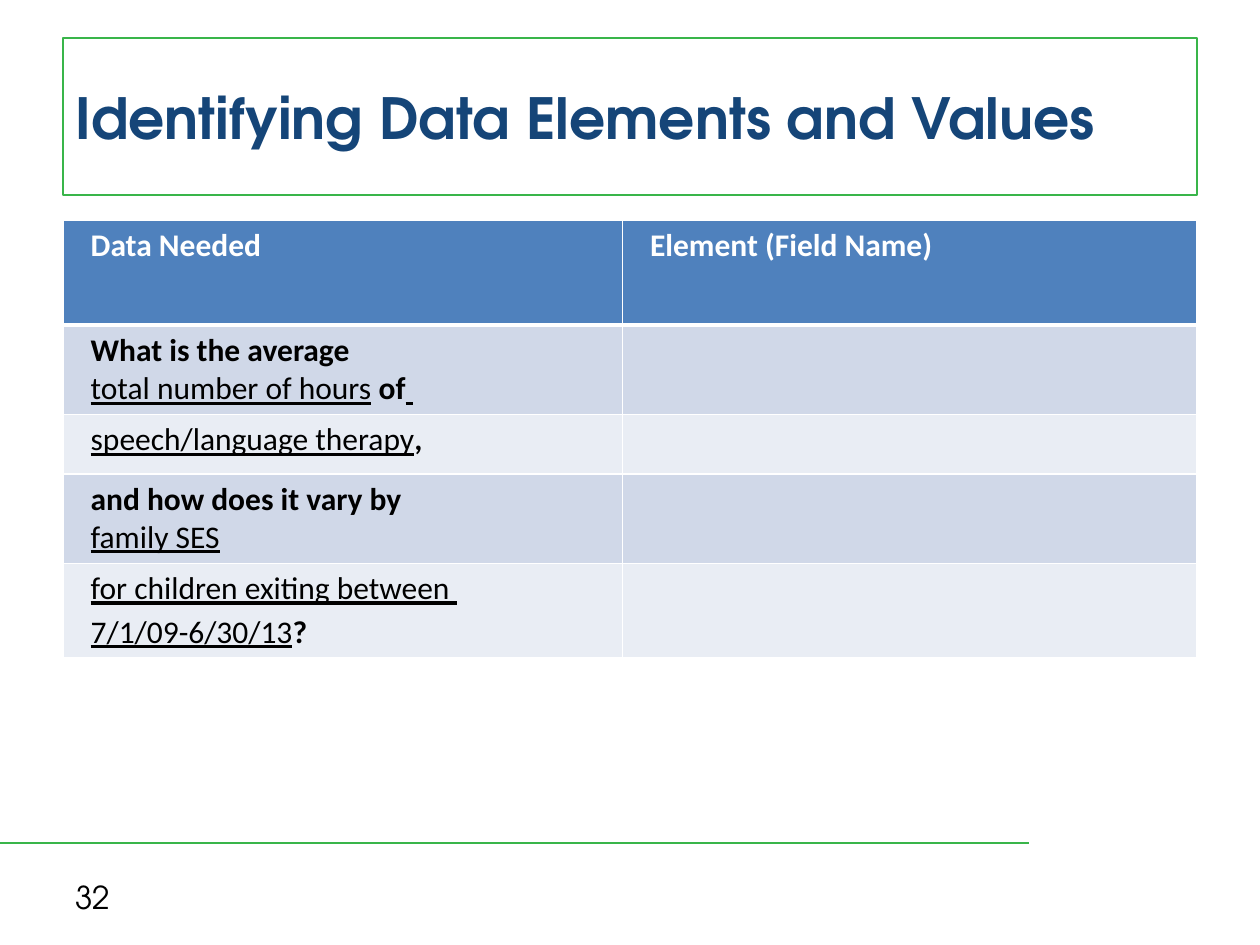
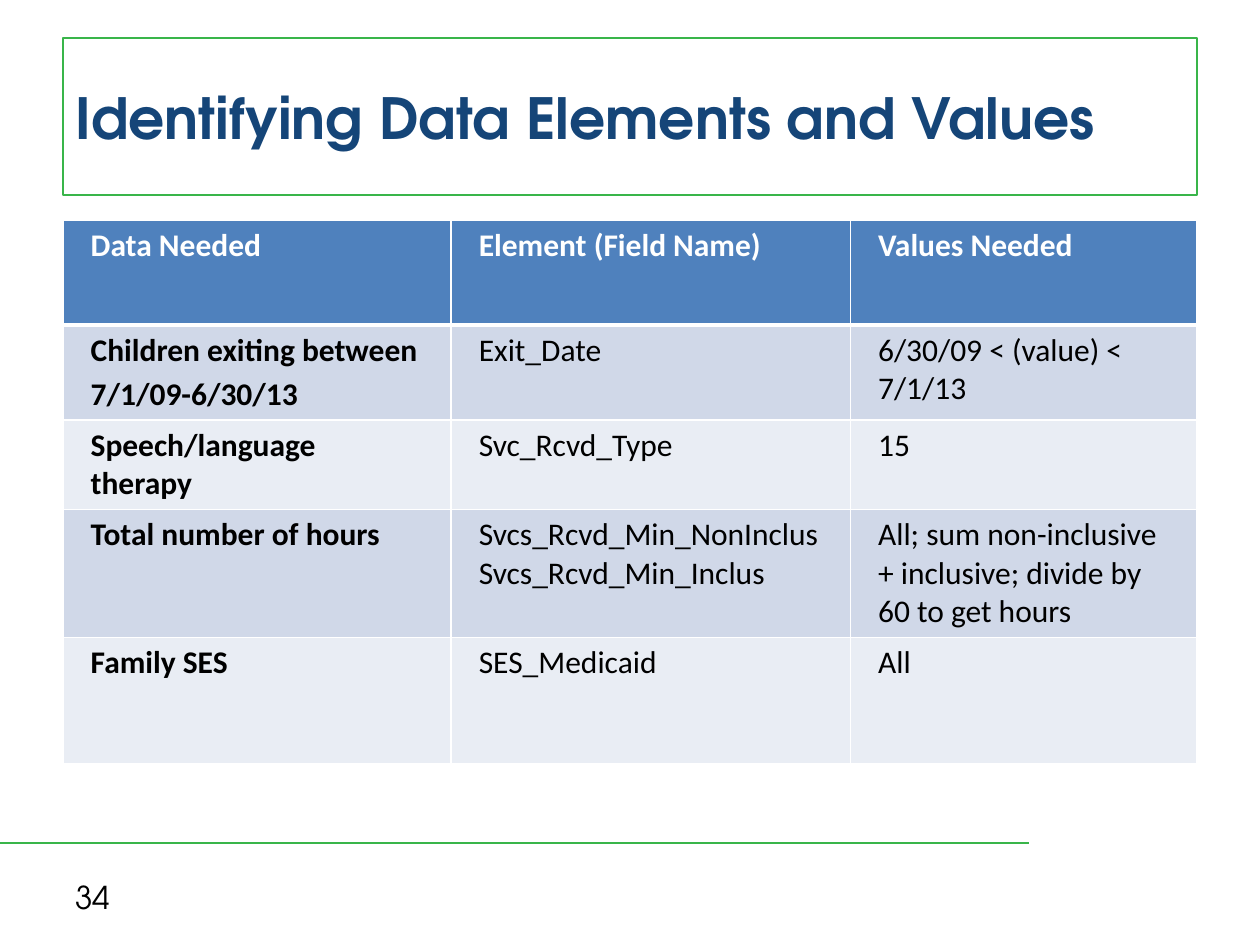
from lxml import etree
from pptx import Presentation
from pptx.dml.color import RGBColor
from pptx.enum.shapes import MSO_CONNECTOR, MSO_SHAPE
from pptx.enum.text import MSO_ANCHOR, PP_ALIGN
from pptx.oxml.ns import qn
from pptx.util import Inches, Pt

LEFT = PP_ALIGN.LEFT
MIDDLE = MSO_ANCHOR.MIDDLE
STRAIGHT = MSO_CONNECTOR.STRAIGHT
RECTANGLE = MSO_SHAPE.RECTANGLE

COLORS = {
    "green": "39B54A",
    "navy": "154578",
    "header": "4F81BD",
    "dark_band": "D0D8E8",
    "light_band": "E9EDF4",
    "white": "FFFFFF",
    "black": "000000",
}
HEADING_FONT = "TeX Gyre Adventor"
TABLE_FONT = "Calibri"
TITLE = "Identifying Data Elements and Values"


def color(name):
    return RGBColor.from_string(COLORS[name])


def write(frame, paragraphs, font=TABLE_FONT, size=18, ink="black", gap=0):
    """Each paragraph is a list of (text, style) runs; style holds b and/or u."""
    frame.word_wrap = True
    for index, runs in enumerate(paragraphs):
        paragraph = frame.add_paragraph() if index else frame.paragraphs[0]
        paragraph.alignment = LEFT
        if index and gap:
            paragraph.space_before = Pt(gap)
        for text, style in runs:
            run = paragraph.add_run()
            run.text = text
            run.font.name = font
            run.font.size = Pt(size)
            run.font.bold = "b" in style
            run.font.underline = "u" in style
            run.font.color.rgb = color(ink)


slides = [
    {
        "number": "32",
        "columns": [4.44, 4.56],
        "heights": [0.83, 0.58, 0.47, 0.67, 0.75],
        "rows": [
            [[[("Data Needed", "b")]], [[("Element (Field Name)", "b")]]],
            [[[("What is the average", "b")],
              [("total number of hours", "u"), (" ", ""), ("of", "b"), (" ", "u")]], []],
            [[[("speech/language therapy", "u"), (",", "b")]], []],
            [[[("and how does it vary by", "b")], [("family SES", "u")]], []],
            [[[("for children exiting between ", "u")],
              [("7/1/09-6/30/13", "u"), ("?", "b")]], []],
        ],
        "spaced_row": 4,
    },
    {
        "number": "34",
        "columns": [3.08, 3.17, 2.75],
        "heights": [0.83, 0.58, 0.58, 0.58, 1],
        "rows": [
            [[[("Data Needed", "b")]], [[("Element (Field Name)", "b")]],
             [[("Values Needed", "b")]]],
            [[[("Children exiting between", "b")], [("7/1/09-6/30/13", "b")]],
             [[("Exit_Date", "")]], [[("6/30/09 < (value) < 7/1/13", "")]]],
            [[[("Speech/language therapy", "b")]], [[("Svc_Rcvd_Type", "")]], [[("15", "")]]],
            [[[("Total number of hours", "b")]],
             [[("Svcs_Rcvd_Min_NonInclus", "")], [("Svcs_Rcvd_Min_Inclus", "")]],
             [[("All; sum non-inclusive + inclusive; divide by 60 to get hours", "")]]],
            [[[("Family SES", "b")]], [[("SES_Medicaid", "")]], [[("All", "")]]],
        ],
        "spaced_row": 1,
    },
]

prs = Presentation()
prs.slide_width = Inches(10)
prs.slide_height = Inches(7.5)

for content in slides:
    slide = prs.slides.add_slide(prs.slide_layouts[6])

    footer_rule = slide.shapes.add_connector(
        STRAIGHT, 0, Inches(6.69), Inches(8.17), Inches(6.69))
    footer_rule.line.color.rgb = color("green")
    footer_rule.line.width = Pt(1.5)
    etree.SubElement(footer_rule._element.spPr, qn("a:effectLst"))

    rows, columns, heights = content["rows"], content["columns"], content["heights"]
    data_table = slide.shapes.add_table(
        len(rows), len(columns), Inches(0.5), Inches(1.75),
        Inches(9), Inches(sum(heights))).table
    for column, width in zip(data_table.columns, columns):
        column.width = Inches(width)
    for row, height in zip(data_table.rows, heights):
        row.height = Inches(height)

    for row_index, row in enumerate(rows):
        is_header = row_index == 0
        band = "header" if is_header else "dark_band" if row_index % 2 else "light_band"
        borders = {
            "lnL": 1,
            "lnR": 1,
            "lnT": 3 if row_index == 1 else 1,
            "lnB": 3 if is_header else 1,
        }
        for column_index, paragraphs in enumerate(row):
            cell = data_table.cell(row_index, column_index)
            cell.margin_left = cell.margin_right = Inches(0.22)
            cell.margin_top = cell.margin_bottom = Inches(0.05)
            properties = cell._tc.get_or_add_tcPr()
            for side, width in borders.items():
                border = etree.SubElement(properties, qn("a:" + side), w=str(Pt(width)))
                border_fill = etree.SubElement(border, qn("a:solidFill"))
                etree.SubElement(border_fill, qn("a:srgbClr"), val=COLORS["white"])
            cell.fill.solid()
            cell.fill.fore_color.rgb = color(band)
            write(cell.text_frame, paragraphs,
                  ink="white" if is_header else "black",
                  gap=3 if row_index == content["spaced_row"] else 0)

    title = slide.shapes.add_shape(
        RECTANGLE, Inches(0.5), Inches(0.3), Inches(9), Inches(1.25))
    title.shadow.inherit = False
    title.fill.background()
    title.line.color.rgb = color("green")
    title.line.width = Pt(1)
    title.text_frame.vertical_anchor = MIDDLE
    write(title.text_frame, [[(TITLE, "b")]], font=HEADING_FONT, size=32.4, ink="navy")

    page_number = slide.shapes.add_textbox(
        Inches(0.5), Inches(6.92), Inches(2.33), Inches(0.4))
    page_number.text_frame.vertical_anchor = MIDDLE
    write(page_number.text_frame, [[(content["number"], "")]], font=HEADING_FONT)

prs.save("out.pptx")
